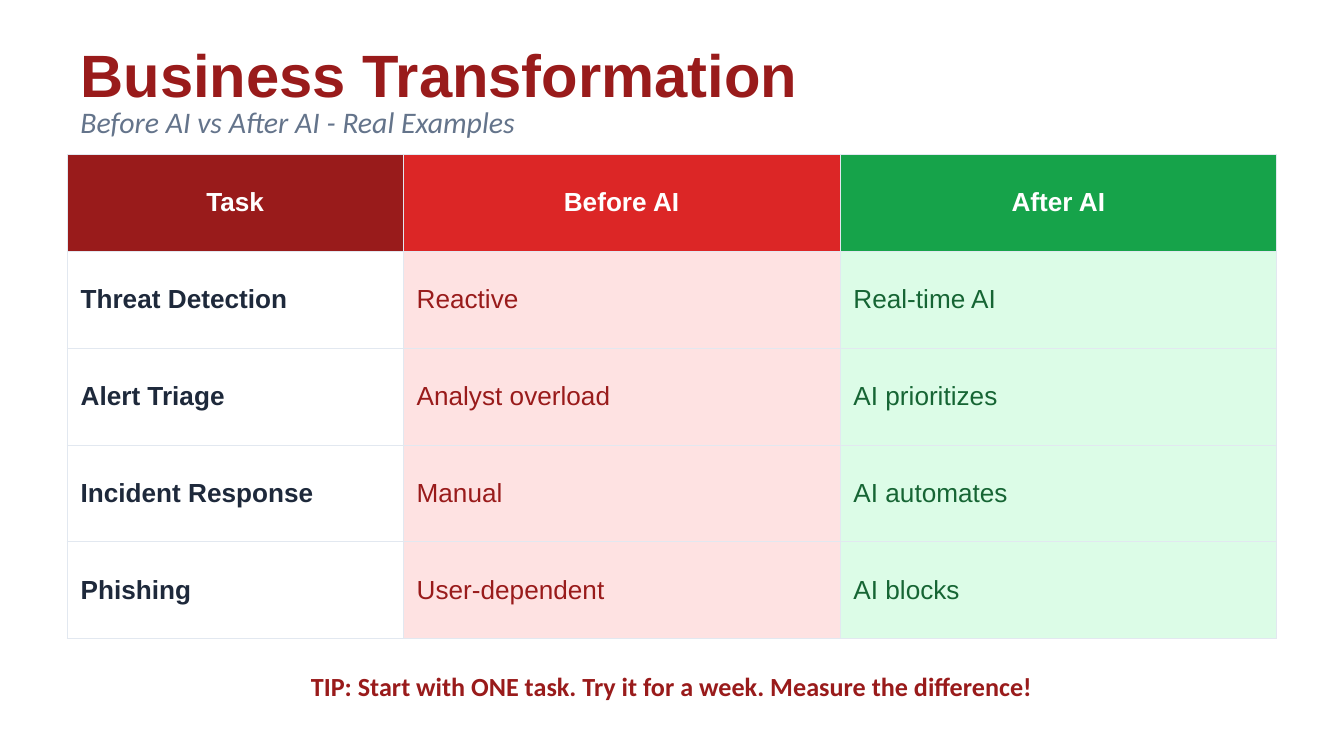
from lxml.etree import SubElement
from pptx import Presentation
from pptx.dml.color import RGBColor
from pptx.enum.text import MSO_ANCHOR, MSO_AUTO_SIZE, PP_ALIGN
from pptx.oxml.ns import qn
from pptx.util import Cm, Pt

# Colours
WHITE = RGBColor(0xFF, 0xFF, 0xFF)
DARK_RED = RGBColor(0x99, 0x1B, 0x1B)
RED = RGBColor(0xDC, 0x26, 0x26)
PALE_RED = RGBColor(0xFE, 0xE2, 0xE2)
GREEN = RGBColor(0x16, 0xA3, 0x4A)
DARK_GREEN = RGBColor(0x16, 0x65, 0x34)
PALE_GREEN = RGBColor(0xDC, 0xFC, 0xE7)
NAVY = RGBColor(0x1E, 0x29, 0x3B)
SLATE = RGBColor(0x64, 0x74, 0x8B)
BORDER = RGBColor(0xE2, 0xE8, 0xF0)

# Content
TITLE = "Business Transformation"
SUBTITLE = "Before AI vs After AI - Real Examples"
TIP = "TIP: Start with ONE task. Try it for a week. Measure the difference!"
ROWS = [
    ("Task", "Before AI", "After AI"),
    ("Threat Detection", "Reactive", "Real-time AI"),
    ("Alert Triage", "Analyst overload", "AI prioritizes"),
    ("Incident Response", "Manual", "AI automates"),
    ("Phishing", "User-dependent", "AI blocks"),
]
COLUMNS = [
    {"width": Cm(6.35), "header": DARK_RED, "fill": WHITE, "text": NAVY, "bold": True},
    {"width": Cm(8.255), "header": RED, "fill": PALE_RED, "text": DARK_RED, "bold": False},
    {"width": Cm(8.255), "header": GREEN, "fill": PALE_GREEN, "text": DARK_GREEN, "bold": False},
]

# Text formats
TITLE_FONT = {"name": "Arial", "size": Pt(32), "bold": True}
SUBTITLE_FONT = {"name": "Calibri", "size": Pt(16), "italic": True}
TIP_FONT = {"name": "Calibri", "size": Pt(14), "bold": True}
CELL_FONT = {"name": "Arial", "size": Pt(14)}

# Layout
LEFT, WIDTH = Cm(1.27), Cm(22.86)
TABLE_TOP, ROW_HEIGHT = Cm(2.92), Cm(1.83)


def write_text(text_frame, text, font, color, alignment=PP_ALIGN.LEFT):
    text_frame.text = text
    paragraph = text_frame.paragraphs[0]
    paragraph.alignment = alignment
    for name, value in font.items():
        setattr(paragraph.runs[0].font, name, value)
    paragraph.runs[0].font.color.rgb = color


def place_text(shape, top, height, *text_format):
    frame_format = {
        "word_wrap": True,
        "auto_size": MSO_AUTO_SIZE.NONE,
        "vertical_anchor": MSO_ANCHOR.MIDDLE,
    }
    position = {"left": LEFT, "top": top, "width": WIDTH, "height": height}
    for target, values in ((shape, position), (shape.text_frame, frame_format)):
        for name, value in values.items():
            setattr(target, name, value)
    write_text(shape.text_frame, *text_format)


def add_borders(cell):
    properties = cell._tc.get_or_add_tcPr()
    for side in ("a:lnL", "a:lnR", "a:lnT", "a:lnB"):
        line = SubElement(properties, qn(side), w=str(Pt(0.5)))
        fill = SubElement(line, qn("a:solidFill"))
        SubElement(fill, qn("a:srgbClr"), val=str(BORDER))


def add_comparison_table(slide):
    table = slide.shapes.add_table(
        len(ROWS), len(COLUMNS), LEFT, TABLE_TOP, WIDTH, ROW_HEIGHT * len(ROWS)
    ).table
    table.horz_banding = False
    for column_index, column in enumerate(COLUMNS):
        table.columns[column_index].width = column["width"]
        for row_index, row in enumerate(ROWS):
            is_header = row_index == 0
            cell = table.cell(row_index, column_index)
            add_borders(cell)
            cell.fill.solid()
            cell.fill.fore_color.rgb = column["header" if is_header else "fill"]
            cell.vertical_anchor = MSO_ANCHOR.MIDDLE
            write_text(
                cell.text_frame,
                row[column_index],
                {**CELL_FONT, "bold": is_header or column["bold"]},
                WHITE if is_header else column["text"],
                PP_ALIGN.CENTER if is_header else PP_ALIGN.LEFT,
            )


def main():
    presentation = Presentation()
    presentation.slide_width = Cm(25.4)
    presentation.slide_height = Cm(14.29)
    slide = presentation.slides.add_slide(presentation.slide_layouts[5])

    # Title and subtitle
    place_text(slide.shapes.title, Cm(0.76), Cm(1.27), TITLE, TITLE_FONT, DARK_RED)
    subtitle = slide.shapes.add_textbox(0, 0, 0, 0)
    place_text(subtitle, Cm(1.91), Cm(0.76), SUBTITLE, SUBTITLE_FONT, SLATE)

    # Comparison table
    add_comparison_table(slide)

    # Tip
    tip = slide.shapes.add_textbox(0, 0, 0, 0)
    place_text(tip, Cm(12.45), Cm(1.02), TIP, TIP_FONT, DARK_RED, PP_ALIGN.CENTER)

    presentation.save("out.pptx")


if __name__ == "__main__":
    main()
